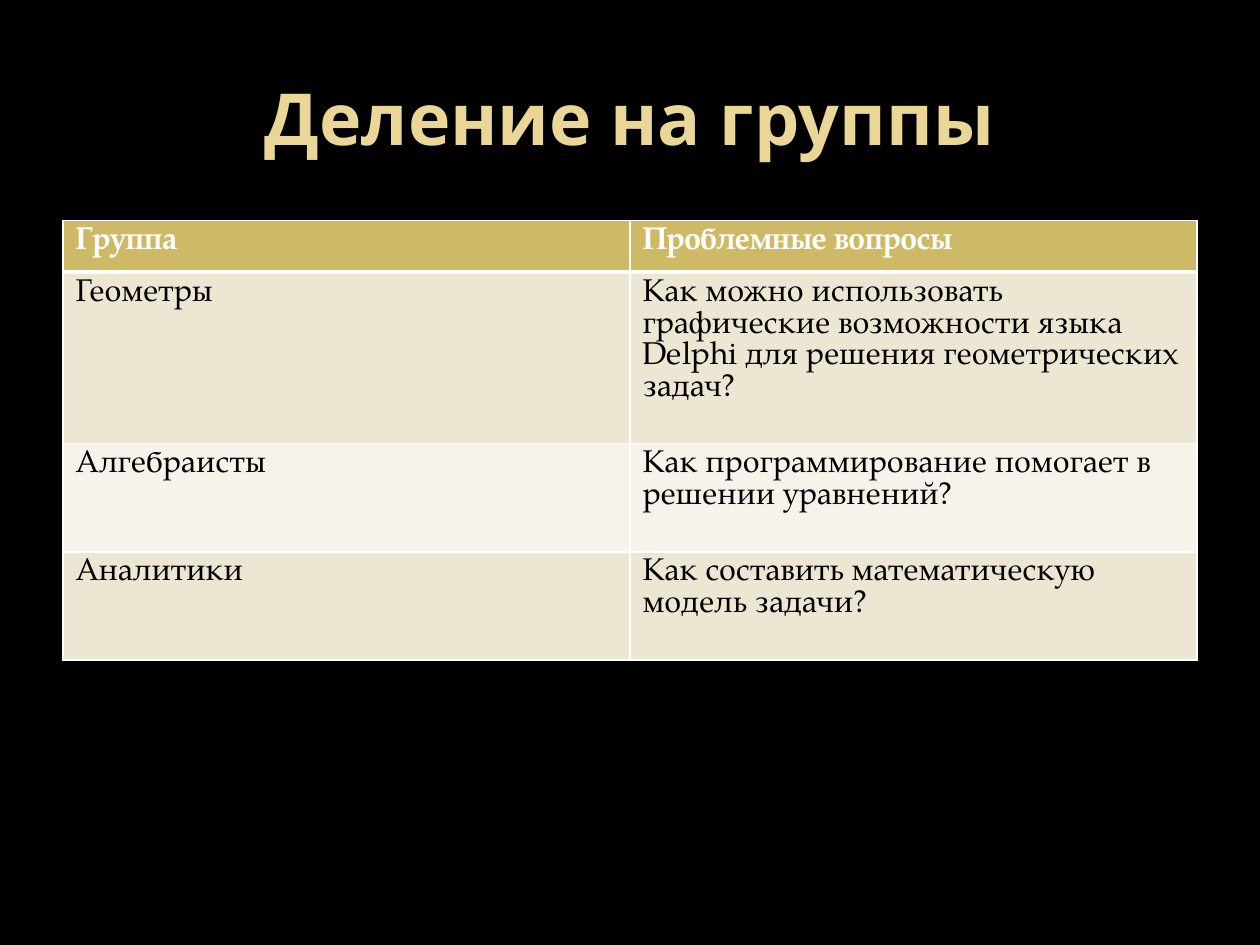
from dataclasses import dataclass

import lxml.etree
import pptx
import pptx.dml.color
import pptx.enum.text
import pptx.oxml.ns
import pptx.util

COLORS = {
    "background": "000000",
    "title": "EAD696",
    "title_end": "E7D081",
    "header": "CEB966",
    "band_dark": "EDE6D3",
    "band_light": "F6F3EA",
    "border": "FFFFFF",
    "header_text": "FFFFFF",
    "body_text": "000000",
}
TITLE_FONT = "Open Sans"
TABLE_FONT = "TeX Gyre Pagella"
SLIDE_WIDTH = pptx.util.Inches(10)
SLIDE_HEIGHT = pptx.util.Inches(7.5)
MARGIN = 0.05
CONTENT_WIDTH = 1 - 2 * MARGIN


@dataclass(frozen=True)
class GroupRow:
    group: str
    question: str
    height: float
    fill: str
    text_color: str = "body_text"
    is_header: bool = False


ROWS = [
    GroupRow("Группа", "Проблемные вопросы", 0.41, "header", "header_text", True),
    GroupRow(
        "Геометры",
        "Как можно использовать графические возможности языка Delphi "
        "для решения геометрических задач?",
        1.36,
        "band_dark",
    ),
    GroupRow("Алгебраисты", "Как программирование помогает в решении уравнений?",
             0.86, "band_light"),
    GroupRow("Аналитики", "Как составить математическую модель задачи?",
             0.86, "band_dark"),
]


def rgb(name: str) -> pptx.dml.color.RGBColor:
    return pptx.dml.color.RGBColor.from_string(COLORS[name])


def across(share: float) -> int:
    return int(SLIDE_WIDTH * share)


def down(share: float) -> int:
    return int(SLIDE_HEIGHT * share)


def add_run(paragraph, text: str, font_name: str, size: float, bold: bool):
    run = paragraph.add_run()
    run.text = text
    run.font.name = font_name
    run.font.size = pptx.util.Pt(size)
    run.font.bold = bold
    return run


def set_borders(cell, bottom_width: float) -> None:
    qn = pptx.oxml.ns.qn
    properties = cell._tc.get_or_add_tcPr()
    widths = {"a:lnL": 1, "a:lnR": 1, "a:lnT": 1, "a:lnB": bottom_width}
    for tag, width in widths.items():
        line = lxml.etree.SubElement(properties, qn(tag), w=str(pptx.util.Pt(width)))
        fill = lxml.etree.SubElement(line, qn("a:solidFill"))
        lxml.etree.SubElement(fill, qn("a:srgbClr"), val=COLORS["border"])


def add_title(slide, text: str) -> None:
    title = slide.shapes.title
    title.left, title.top = across(MARGIN), down(0.04)
    title.width, title.height = across(CONTENT_WIDTH), pptx.util.Inches(1.25)
    title.text_frame.vertical_anchor = pptx.enum.text.MSO_ANCHOR.MIDDLE
    paragraph = title.text_frame.paragraphs[0]
    paragraph.alignment = pptx.enum.text.PP_ALIGN.CENTER
    run = add_run(paragraph, text, TITLE_FONT, 41, True)
    fill = run.font.fill
    fill.gradient()
    fill.gradient_angle = 280
    start, end = fill.gradient_stops
    start.position, end.position = 0.73, 1
    start.color.rgb, end.color.rgb = rgb("title"), rgb("title_end")


def fill_cell(cell, text: str, row: GroupRow, bottom_width: float) -> None:
    set_borders(cell, bottom_width)
    cell.fill.solid()
    cell.fill.fore_color.rgb = rgb(row.fill)
    run = add_run(cell.text_frame.paragraphs[0], text, TABLE_FONT, 18, row.is_header)
    run.font.color.rgb = rgb(row.text_color)


def add_group_table(slide, rows: list[GroupRow]) -> None:
    height = pptx.util.Inches(sum(row.height for row in rows))
    table = slide.shapes.add_table(
        len(rows), 2, across(MARGIN), pptx.util.Inches(1.75),
        across(CONTENT_WIDTH), height,
    ).table
    for index, row in enumerate(rows):
        table.rows[index].height = pptx.util.Inches(row.height)
        for column, text in enumerate((row.group, row.question)):
            fill_cell(table.cell(index, column), text, row, 3 if row.is_header else 1)
    # The first body row shares the thick rule under the header.
    for cell in table.rows[1].cells:
        top = cell._tc.tcPr.find(pptx.oxml.ns.qn("a:lnT"))
        top.set("w", str(pptx.util.Pt(3)))


def main() -> None:
    presentation = pptx.Presentation()
    presentation.slide_width = SLIDE_WIDTH
    presentation.slide_height = SLIDE_HEIGHT
    slide = presentation.slides.add_slide(
        presentation.slide_layouts.get_by_name("Title Only")
    )
    slide.background.fill.solid()
    slide.background.fill.fore_color.rgb = rgb("background")
    add_title(slide, "Деление на группы")
    add_group_table(slide, ROWS)
    presentation.save("out.pptx")


if __name__ == "__main__":
    main()
